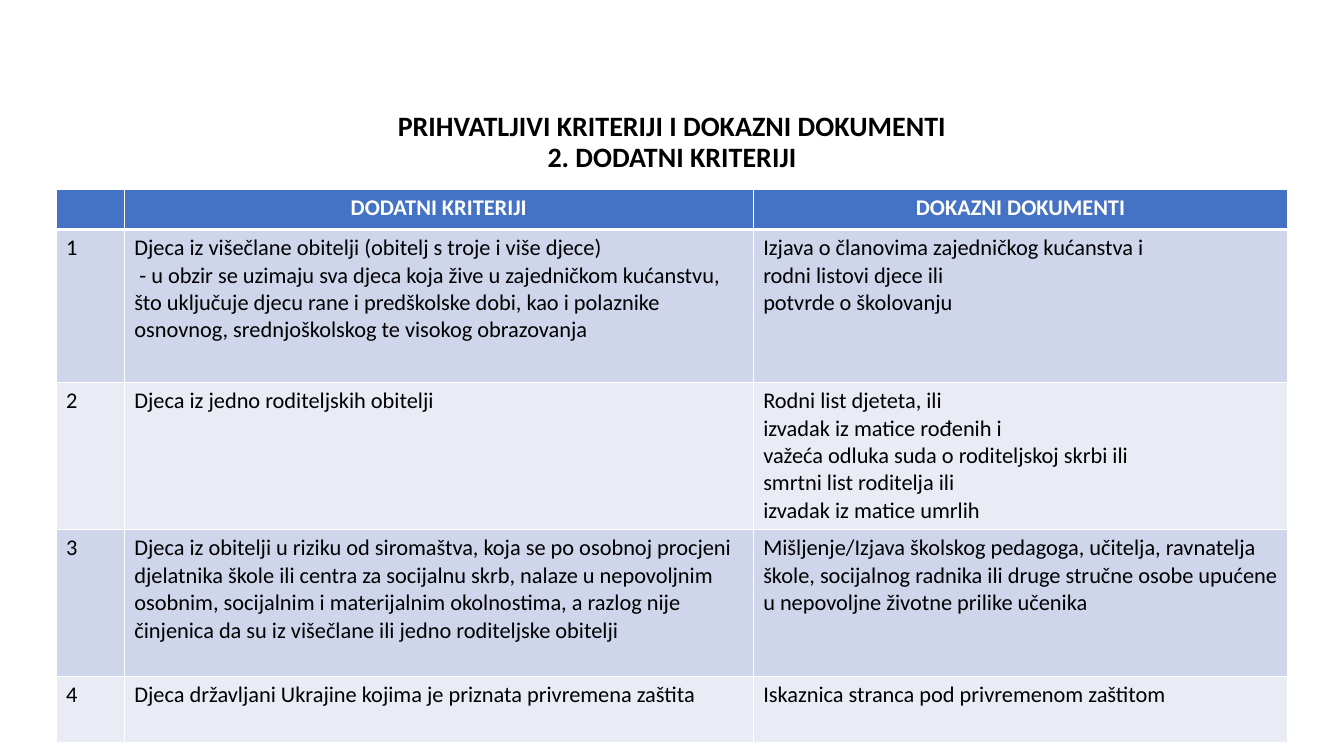
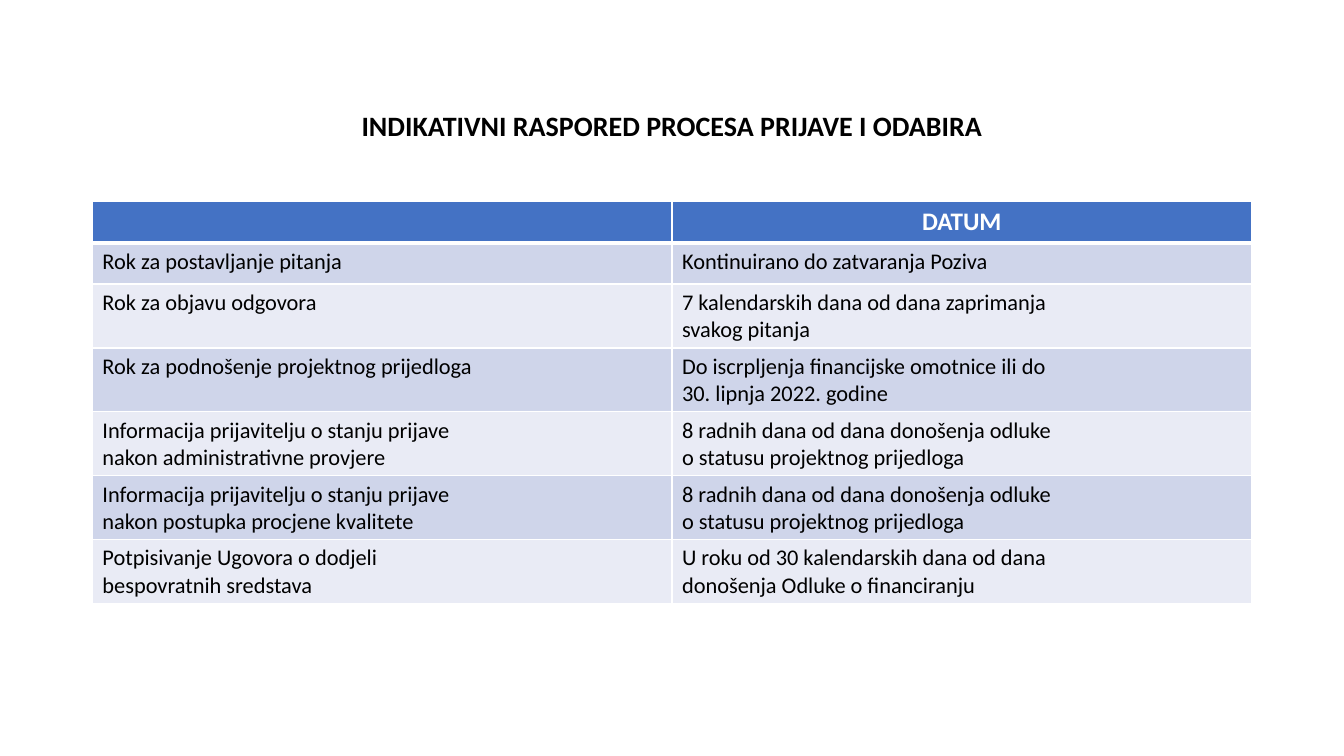
from dataclasses import dataclass
from typing import Any

from lxml import etree
from pptx import Presentation, util as u
from pptx.dml.color import RGBColor
from pptx.enum import text
from pptx.oxml.ns import qn

SLIDE_WIDTH, SLIDE_HEIGHT = u.Inches(13.33), u.Inches(7.5)
GRID = 24  # columns and rows on a slide

FONT = "Calibri"
WHITE, BLACK = "FFFFFF", "000000"
HEADER_FILL = "4472C4"
BAND_FILLS = ("CFD5EA", "E9EBF5")
THIN, THICK = 1, 3
TITLE_SIZE, BODY_SIZE = 20, 16
MARGIN = 1.65


@dataclass(frozen=True)
class TableSlide:
    """One slide; lengths are grid columns and rows, lines of a cell are split by newlines."""
    title: str
    left: float
    top: float
    column_widths: tuple[float, ...]
    row_heights: tuple[float, ...]
    header_size: int
    rows: tuple[tuple[str, ...], ...]


TABLE_SLIDES = (
    TableSlide(
        title="PRIHVATLJIVI KRITERIJI I DOKAZNI DOKUMENTI\n2. DODATNI KRITERIJI",
        left=1, top=6,
        column_widths=(1.22, 11.23, 9.55),
        row_heights=(1.25, 4.86, 4.67, 4.67, 2.08),
        header_size=16,
        rows=(
            ("", "DODATNI KRITERIJI", "DOKAZNI DOKUMENTI"),
            ("1",
             "Djeca iz višečlane obitelji (obitelj s troje i više djece)\n"
             " - u obzir se uzimaju sva djeca koja žive u zajedničkom kućanstvu, "
             "što uključuje djecu rane i predškolske dobi, kao i polaznike "
             "osnovnog, srednjoškolskog te visokog obrazovanja",
             "Izjava o članovima zajedničkog kućanstva i\n"
             "rodni listovi djece ili\npotvrde o školovanju"),
            ("2",
             "Djeca iz jedno roditeljskih obitelji",
             "Rodni list djeteta, ili\nizvadak iz matice rođenih i\n"
             "važeća odluka suda o roditeljskoj skrbi ili\n"
             "smrtni list roditelja ili\nizvadak iz matice umrlih"),
            ("3",
             "Djeca iz obitelji u riziku od siromaštva, koja se po osobnoj procjeni "
             "djelatnika škole ili centra za socijalnu skrb, nalaze u nepovoljnim "
             "osobnim, socijalnim i materijalnim okolnostima, a razlog nije "
             "činjenica da su iz višečlane ili jedno roditeljske obitelji",
             "Mišljenje/Izjava školskog pedagoga, učitelja, ravnatelja škole, "
             "socijalnog radnika ili druge stručne osobe upućene "
             "u nepovoljne životne prilike učenika"),
            ("4",
             "Djeca državljani Ukrajine kojima je priznata privremena zaštita",
             "Iskaznica stranca pod privremenom zaštitom"),
        ),
    ),
    TableSlide(
        title="INDIKATIVNI RASPORED PROCESA PRIJAVE I ODABIRA",
        left=MARGIN, top=6.4,
        column_widths=(10.35,) * 2,
        row_heights=(1.31,) * 7,
        header_size=18,
        rows=(
            ("", "DATUM"),
            ("Rok za postavljanje pitanja", "Kontinuirano do zatvaranja Poziva"),
            ("Rok za objavu odgovora",
             "7 kalendarskih dana od dana zaprimanja\nsvakog pitanja"),
            ("Rok za podnošenje projektnog prijedloga",
             "Do iscrpljenja financijske omotnice ili do\n30. lipnja 2022. godine"),
            ("Informacija prijavitelju o stanju prijave\nnakon administrativne provjere",
             "8 radnih dana od dana donošenja odluke\no statusu projektnog prijedloga"),
            ("Informacija prijavitelju o stanju prijave\nnakon postupka procjene kvalitete",
             "8 radnih dana od dana donošenja odluke\no statusu projektnog prijedloga"),
            ("Potpisivanje Ugovora o dodjeli\nbespovratnih sredstava",
             "U roku od 30 kalendarskih dana od dana\ndonošenja Odluke o financiranju"),
        ),
    ),
)


def color(value: str) -> RGBColor:
    return RGBColor.from_string(value)


def across(columns: float) -> int:
    return round(SLIDE_WIDTH * columns / GRID)


def down(rows: float) -> int:
    return round(SLIDE_HEIGHT * rows / GRID)


def add_run(paragraph: Any, words: str, size: int, ink: str, bold: bool) -> None:
    run = paragraph.add_run()
    run.text = words
    run.font.name, run.font.size, run.font.bold = FONT, u.Pt(size), bold
    run.font.color.rgb = color(ink)


def add_title(slide: Any, title: str) -> None:
    shape = slide.shapes.add_textbox(
        across(MARGIN), down(1.28), across(GRID - 2 * MARGIN), down(4.64))
    frame = shape.text_frame
    frame.word_wrap = True
    frame.vertical_anchor = text.MSO_ANCHOR.TOP
    frame.margin_top = down(2.3)
    paragraph = frame.paragraphs[0]
    paragraph.alignment = text.PP_ALIGN.CENTER
    paragraph.line_spacing = 0.9
    for index, line in enumerate(title.split("\n")):
        if index:
            paragraph.add_line_break()
        add_run(paragraph, line, TITLE_SIZE, BLACK, True)


def set_borders(cell: Any, top: int, bottom: int) -> None:
    """Draw white cell borders; must run before the cell is filled."""
    properties = cell._tc.get_or_add_tcPr()
    widths = {"a:lnL": THIN, "a:lnR": THIN, "a:lnT": top, "a:lnB": bottom}
    for tag, width in widths.items():
        line = etree.SubElement(properties, qn(tag), w=str(u.Pt(width)))
        fill = etree.SubElement(line, qn("a:solidFill"))
        etree.SubElement(fill, qn("a:srgbClr"), val=WHITE)


def fill_cell(cell: Any, words: str, row: int, header_size: int) -> None:
    is_header = row == 0
    set_borders(cell, THICK if row == 1 else THIN, THICK if is_header else THIN)
    cell.fill.solid()
    cell.fill.fore_color.rgb = color(HEADER_FILL if is_header else BAND_FILLS[(row - 1) % 2])
    if not words:
        return
    frame = cell.text_frame
    for index, line in enumerate(words.split("\n")):
        paragraph = frame.add_paragraph() if index else frame.paragraphs[0]
        if is_header:
            paragraph.alignment = text.PP_ALIGN.CENTER
            add_run(paragraph, line, header_size, WHITE, True)
        else:
            add_run(paragraph, line, BODY_SIZE, BLACK, False)


def add_table(slide: Any, content: TableSlide) -> None:
    table = slide.shapes.add_table(
        len(content.row_heights), len(content.column_widths),
        across(content.left), down(content.top),
        across(sum(content.column_widths)), down(sum(content.row_heights))).table
    table.horz_banding = False
    for column, width in zip(table.columns, content.column_widths):
        column.width = across(width)
    for row, height in zip(table.rows, content.row_heights):
        row.height = down(height)
    for row_index, cells in enumerate(content.rows):
        for column_index, words in enumerate(cells):
            fill_cell(table.cell(row_index, column_index), words, row_index, content.header_size)


def main() -> None:
    presentation = Presentation()
    presentation.slide_width, presentation.slide_height = SLIDE_WIDTH, SLIDE_HEIGHT
    blank = presentation.slide_layouts[6]
    for content in TABLE_SLIDES:
        slide = presentation.slides.add_slide(blank)
        add_title(slide, content.title)
        add_table(slide, content)
    presentation.save("out.pptx")


if __name__ == "__main__":
    main()
